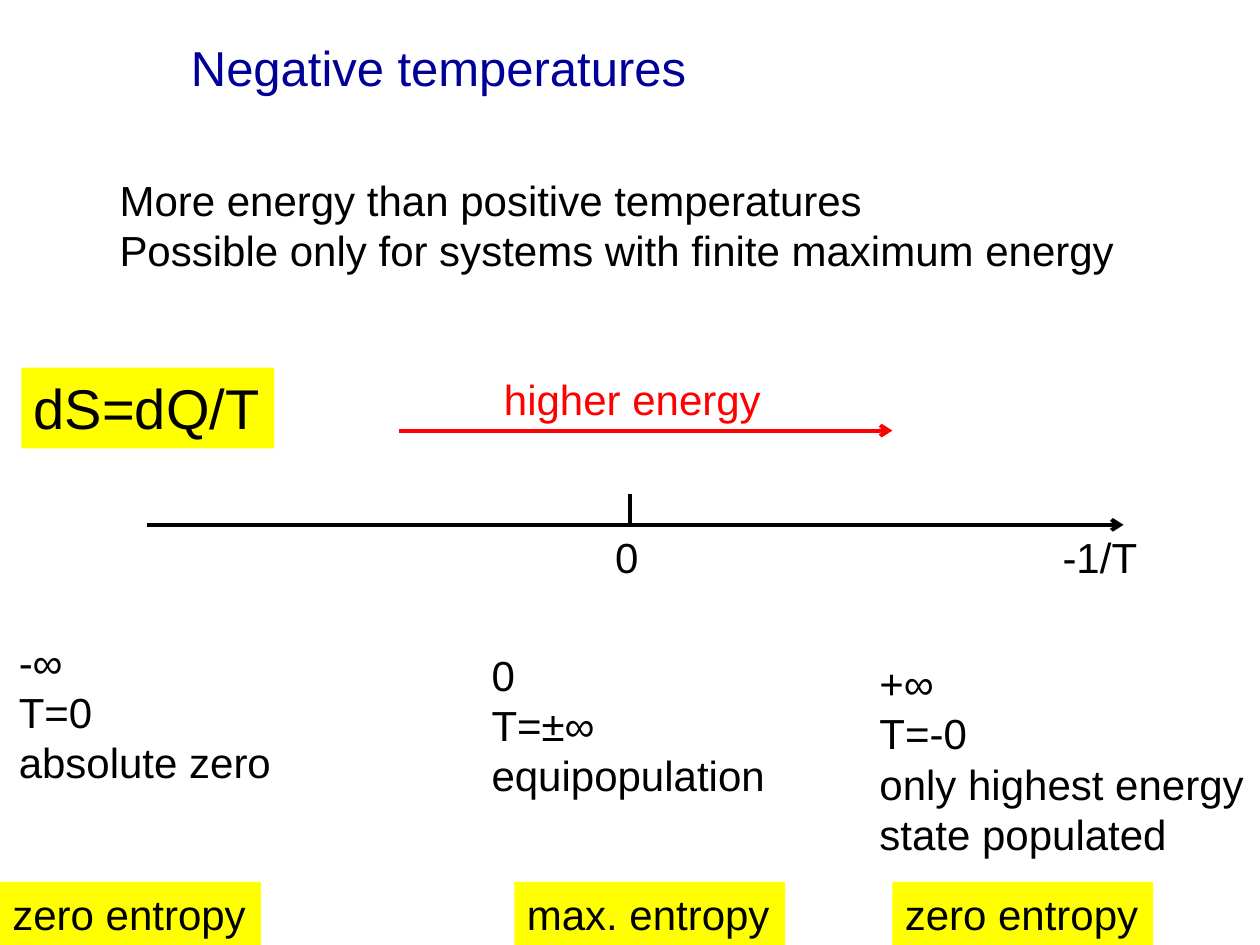
from dataclasses import dataclass

from lxml.etree import SubElement
from pptx import Presentation
from pptx.dml.color import RGBColor
from pptx.enum.shapes import MSO_CONNECTOR, MSO_SHAPE
from pptx.enum.text import MSO_ANCHOR, MSO_AUTO_SIZE, PP_ALIGN
from pptx.oxml.ns import qn
from pptx.slide import Slide
from pptx.util import Cm, Pt

BLACK = RGBColor(0x00, 0x00, 0x00)
NAVY = RGBColor(0x00, 0x00, 0x99)
RED = RGBColor(0xFF, 0x00, 0x00)
YELLOW = RGBColor(0xFF, 0xFF, 0x00)

AXIS_Y = 10.58
ENERGY_Y = 8.68
ZERO_X = 12.7
ENTROPY_Y = 17.78
LABEL_H = 1.27


@dataclass
class Label:
    """Text at a place in cm; newlines part paragraphs, \\v breaks a line."""
    text: str
    left: float
    top: float
    width: float
    height: float = LABEL_H
    size: int = 24
    color: RGBColor = BLACK
    wrap: bool = False
    filled: bool = False


@dataclass
class Line:
    x1: float
    y1: float
    x2: float
    y2: float
    color: RGBColor = BLACK
    arrow: bool = True


LINES = [
    Line(2.96, AXIS_Y, 22.65, AXIS_Y),
    Line(ZERO_X, AXIS_Y - 0.63, ZERO_X, AXIS_Y, arrow=False),
    Line(8.04, ENERGY_Y, 17.99, ENERGY_Y, RED),
]

LABELS = [
    Label("Negative temperatures", 3.6, 0.64, 18.42, 1.45, 28, NAVY, wrap=True),
    Label("More energy than positive temperatures\n"
          "Possible only for systems with finite maximum energy",
          2.16, 3.39, 20.75, 2.3),
    Label("0", 12.15, AXIS_Y, 0.99),
    Label("-1/T", 21.17, AXIS_Y, 2.03),
    Label("-∞\nT=0\nabsolute zero", 0.13, 12.7, 5.74, 3.33),
    Label("0\nT=±∞\nequipopulation", 9.66, 12.96, 6.1, 3.33),
    Label("+∞\nT=-0\nonly highest energy\vstate populated",
          17.48, 13.13, 7.92, 4.36),
    Label("higher energy", 9.91, ENERGY_Y - LABEL_H, 5.74, color=RED),
    Label("zero entropy", 0, ENTROPY_Y, 5.26, filled=True),
    Label("zero entropy", 17.99, ENTROPY_Y, 5.26, filled=True),
    Label("max. entropy", 10.37, ENTROPY_Y, 5.46, filled=True),
    Label("dS=dQ/T", 0.43, 7.41, 5.1, 1.63, 32, filled=True),
]


def draw_label(s: Slide, label: Label) -> None:
    box = [Cm(v) for v in (label.left, label.top, label.width, label.height)]
    if label.filled:
        sp = s.shapes.add_shape(MSO_SHAPE.RECTANGLE, *box)
        sp.shadow.inherit = False
        sp.fill.solid()
        sp.fill.fore_color.rgb = YELLOW
        sp.line.fill.background()
    else:
        sp = s.shapes.add_textbox(*box)
    tf = sp.text_frame
    tf.text = label.text
    frame_format = {"word_wrap": label.wrap, "vertical_anchor": MSO_ANCHOR.TOP,
                    "auto_size": MSO_AUTO_SIZE.SHAPE_TO_FIT_TEXT}
    for name, value in frame_format.items():
        setattr(tf, name, value)
    for p in tf.paragraphs:
        p.alignment = PP_ALIGN.LEFT
        for r in p.runs:
            for name, value in {"name": "Arial", "size": Pt(label.size)}.items():
                setattr(r.font, name, value)
            r.font.color.rgb = label.color


def draw_line(s: Slide, line: Line) -> None:
    ends = [Cm(v) for v in (line.x1, line.y1, line.x2, line.y2)]
    cxn = s.shapes.add_connector(MSO_CONNECTOR.STRAIGHT, *ends)
    cxn.line.color.rgb = line.color
    cxn.line.width = Pt(2.25)
    if line.arrow:
        SubElement(cxn.line._get_or_add_ln(), qn("a:tailEnd"), type="arrow")
    SubElement(cxn._element.spPr, qn("a:effectLst"))


def main() -> None:
    prs = Presentation()
    prs.slide_width, prs.slide_height = Cm(25.4), Cm(19.05)
    s = prs.slides.add_slide(prs.slide_layouts[6])
    for line in LINES:
        draw_line(s, line)
    for label in LABELS:
        draw_label(s, label)
    prs.save("out.pptx")


if __name__ == "__main__":
    main()
